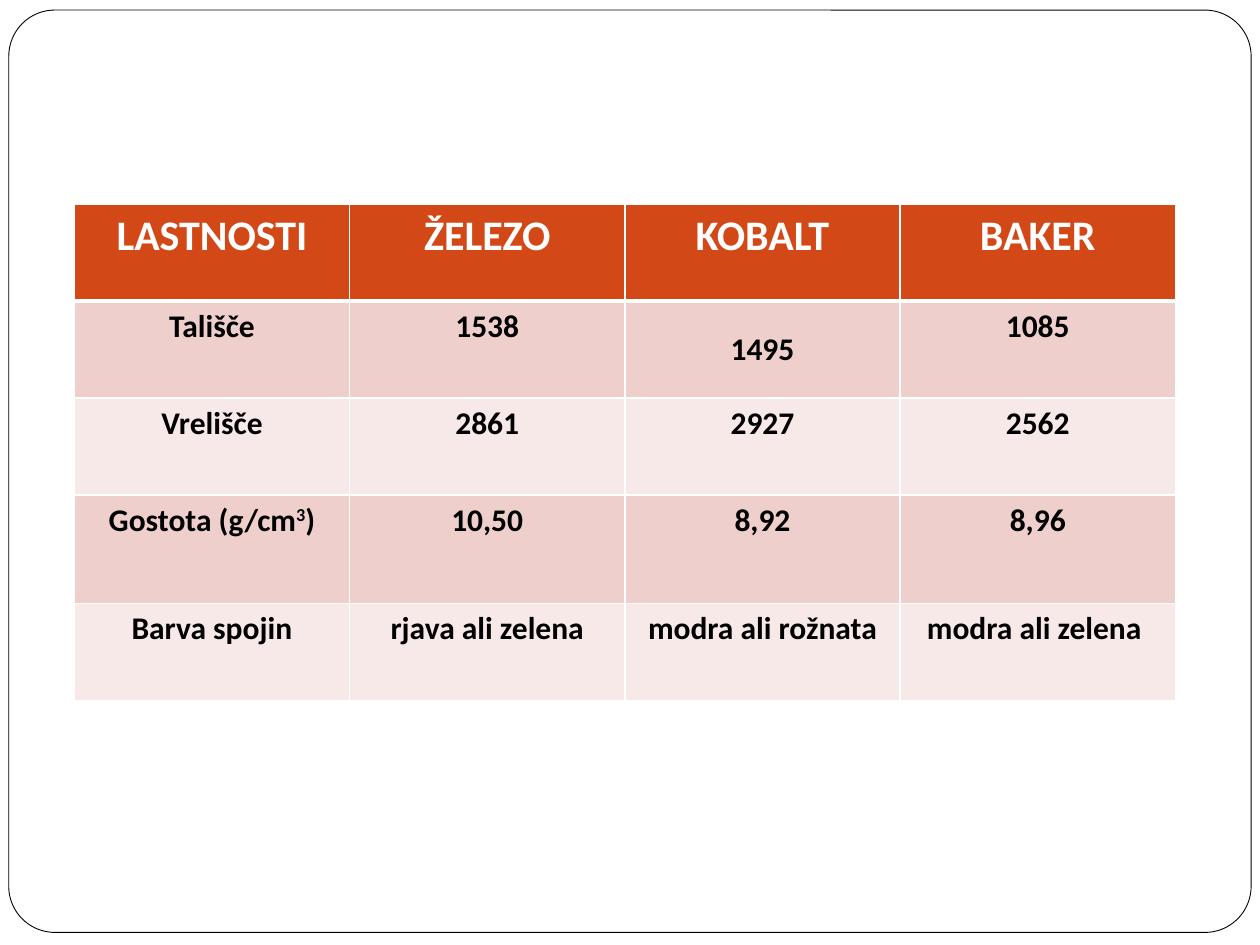
from lxml.etree import SubElement
from pptx import Presentation
from pptx.dml.color import RGBColor
from pptx.enum.shapes import MSO_SHAPE
from pptx.enum.text import MSO_ANCHOR, PP_ALIGN
from pptx.oxml.ns import qn
from pptx.util import Inches, Pt

ROWS = [
    ["LASTNOSTI", "ŽELEZO", "KOBALT", "BAKER"],
    ["Tališče", "1538", "1495", "1085"],
    ["Vrelišče", "2861", "2927", "2562"],
    ["Gostota (g/cm^3^)", "10,50", "8,92", "8,96"],
    ["Barva spojin", "rjava ali zelena", "modra ali rožnata", "modra ali zelena "],
]
ROW_HEIGHTS = [0.77, 0.77, 0.77, 0.86, 0.77]


def color(hex_value):
    return RGBColor.from_string(hex_value)


class SlideBuilder:
    font_name = "Calibri"
    white = "FFFFFF"
    black = "000000"
    header_fill = "D34817"
    band_fills = ["F7E9E7", "EFCFCC"]

    def __init__(self, slide):
        self.slide = slide

    def frame(self, left, top, width, height):
        box = self.slide.shapes.add_shape(
            MSO_SHAPE.ROUNDED_RECTANGLE,
            Inches(left), Inches(top), Inches(width), Inches(height))
        box.adjustments[0] = 0.05
        box.shadow.inherit = False
        box.fill.solid()
        box.fill.fore_color.rgb = color(self.white)
        box.line.color.rgb = color(self.black)
        box.line.width = Pt(0.5)

    def border(self, cell, side, width):
        line = SubElement(cell._tc.get_or_add_tcPr(), qn(f"a:ln{side}"), w=str(Pt(width)))
        fill = SubElement(line, qn("a:solidFill"))
        SubElement(fill, qn("a:srgbClr"), val=self.white)

    def cell(self, cell, text, row):
        """Style one cell; text between carets becomes superscript."""
        header = row == 0
        self.border(cell, "L", 1)
        self.border(cell, "R", 1)
        self.border(cell, "T", 3 if row == 1 else 1)
        self.border(cell, "B", 3 if header else 1)
        cell.fill.solid()
        cell.fill.fore_color.rgb = color(
            self.header_fill if header else self.band_fills[row % 2])

        para = cell.text_frame.paragraphs[0]
        para.alignment = PP_ALIGN.CENTER
        para.font.name = self.font_name
        para.font.size = Pt(24 if header else 18)
        para.font.bold = True
        para.font.color.rgb = color(self.white if header else self.black)
        for index, part in enumerate(text.split("^")):
            span = para.add_run()
            span.text = part
            if index % 2:
                span.font._element.set("baseline", "30000")

    def table(self, left, top, width, rows, heights):
        columns = len(rows[0])
        table = self.slide.shapes.add_table(
            len(rows), columns, Inches(left), Inches(top),
            Inches(width), Inches(sum(heights))).table
        for column in table.columns:
            column.width = Inches(width / columns)
        for row, (texts, height) in enumerate(zip(rows, heights)):
            table.rows[row].height = Inches(height)
            for column, text in enumerate(texts):
                self.cell(table.cell(row, column), text, row)
        return table


def main():
    deck = Presentation()
    deck.slide_width, deck.slide_height = Inches(10), Inches(7.5)
    page = SlideBuilder(deck.slides.add_slide(deck.slide_layouts[6]))
    page.frame(0.07, 0.08, 9.86, 7.32)
    properties = page.table(0.59, 1.62, 8.74, ROWS, ROW_HEIGHTS)

    cobalt_melting = properties.cell(1, 2)
    cobalt_melting.vertical_anchor = MSO_ANCHOR.MIDDLE
    for side in ("left", "top", "right", "bottom"):
        setattr(cobalt_melting, f"margin_{side}", Inches(0.03))
    deck.save("out.pptx")


if __name__ == "__main__":
    main()
